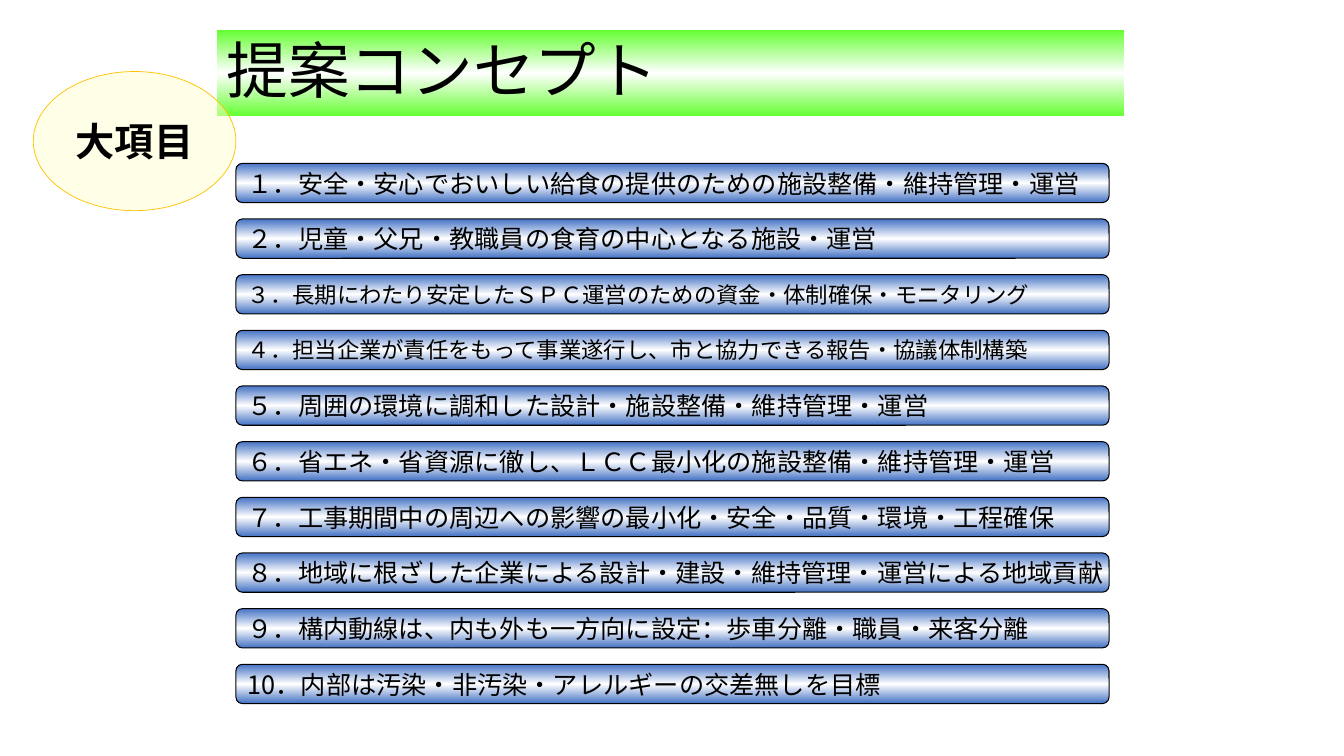
from copy import deepcopy
from dataclasses import dataclass

from pptx import Presentation
from pptx import util as u
from pptx.dml.color import RGBColor
from pptx.enum import shapes, text
from pptx.oxml import ns, xmlchemy


@dataclass(frozen=True)
class Theme:
    font: str = "Noto Sans CJK JP"
    ink: str = "000000"
    white: str = "FFFFFF"
    green: str = "66FF33"
    blue: str = "4472C4"
    cream: str = "FFFFCC"
    gold: str = "FFC000"
    title: int = 44
    badge: int = 28
    item: int = 18
    small: int = 16


THEME = Theme()
KIND = shapes.MSO_SHAPE
ALIGN = text.PP_ALIGN

ITEMS = [
    ("１．安全・安心でおいしい給食の提供のための施設整備・維持管理・運営", THEME.item),
    ("２．児童・父兄・教職員の食育の中心となる施設・運営", THEME.item),
    ("３．長期にわたり安定したＳＰＣ運営のための資金・体制確保・モニタリング", THEME.small),
    ("４．担当企業が責任をもって事業遂行し、市と協力できる報告・協議体制構築", THEME.small),
    ("５．周囲の環境に調和した設計・施設整備・維持管理・運営", THEME.item),
    ("６．省エネ・省資源に徹し、ＬＣＣ最小化の施設整備・維持管理・運営", THEME.item),
    ("７．工事期間中の周辺への影響の最小化・安全・品質・環境・工程確保", THEME.item),
    ("８．地域に根ざした企業による設計・建設・維持管理・運営による地域貢献", THEME.item),
    ("９．構内動線は、内も外も一方向に設定：歩車分離・職員・来客分離", THEME.item),
    ("10．内部は汚染・非汚染・アレルギーの交差無しを目標", THEME.item),
]


def add_shape(slide, kind, box, line=None, width=0):
    shape = slide.shapes.add_shape(kind, *(u.Inches(v) for v in box))
    shape.shadow.inherit = False
    if line:
        shape.line.color.rgb = RGBColor.from_string(line)
        shape.line.width = u.Pt(width)
    else:
        shape.line.fill.background()
    return shape


def fill_band(shape, edge):
    """Fade from the edge colour to white in the middle and back, top to bottom."""
    fill = shape.fill
    fill.gradient()
    fill.gradient_angle = 270
    stops = shape.element.spPr.find(".//" + ns.qn("a:gsLst"))
    stops.append(deepcopy(stops[-1]))
    colors = (edge, THEME.white, edge)
    for stop, place, color in zip(fill.gradient_stops, (0, 0.5, 1), colors):
        stop.position = place
        stop.color.rgb = RGBColor.from_string(color)


def write(shape, words, size, wrap=True, bold=False, **form):
    frame = shape.text_frame
    frame.word_wrap = wrap
    frame.vertical_anchor = text.MSO_ANCHOR.MIDDLE
    para = frame.paragraphs[0]
    for name, value in {"alignment": ALIGN.LEFT, **form}.items():
        setattr(para, name, value)
    run = para.add_run()
    run.text = words
    look = {"name": THEME.font, "size": u.Pt(size), "bold": bold}
    for name, value in look.items():
        setattr(run.font, name, value)
    run.font.color.rgb = RGBColor.from_string(THEME.ink)
    east = xmlchemy.OxmlElement("a:ea")
    east.set("typeface", THEME.font)
    run.font._element.find(ns.qn("a:latin")).addnext(east)


def add_title(slide, box):
    band = add_shape(slide, KIND.RECTANGLE, box)
    fill_band(band, THEME.green)
    write(band, "提案コンセプト", THEME.title, line_spacing=0.9)


def add_items(slide, box, tall=0.39):
    """Spread the numbered bars evenly from the top to the bottom of the box."""
    left, top, width, height = box
    pitch = (height - tall) / (len(ITEMS) - 1)
    for row, (words, size) in enumerate(ITEMS):
        place = (left, top + row * pitch, width, tall)
        bar = add_shape(slide, KIND.ROUNDED_RECTANGLE, place, THEME.ink, 0.75)
        fill_band(bar, THEME.blue)
        write(bar, words, size, wrap=False)


def add_badge(slide, box):
    badge = add_shape(slide, KIND.OVAL, box, THEME.gold, 0.5)
    badge.fill.solid()
    badge.fill.fore_color.rgb = RGBColor.from_string(THEME.cream)
    alpha = xmlchemy.OxmlElement("a:alpha")
    alpha.set("val", "47000")
    badge.element.spPr.find(ns.qn("a:solidFill"))[0].append(alpha)
    write(badge, "大項目", THEME.badge, bold=True, alignment=ALIGN.CENTER)


def main():
    deck = Presentation()
    deck.slide_width = u.Inches(13.33)
    deck.slide_height = u.Inches(7.5)
    slide = deck.slides.add_slide(deck.slide_layouts[6])
    add_title(slide, (2.15, 0.3, 9, 0.85))
    add_items(slide, (2.34, 1.62, 8.66, 5.36))
    add_badge(slide, (0.33, 0.71, 2.01, 1.38))
    deck.save("out.pptx")


if __name__ == "__main__":
    main()
